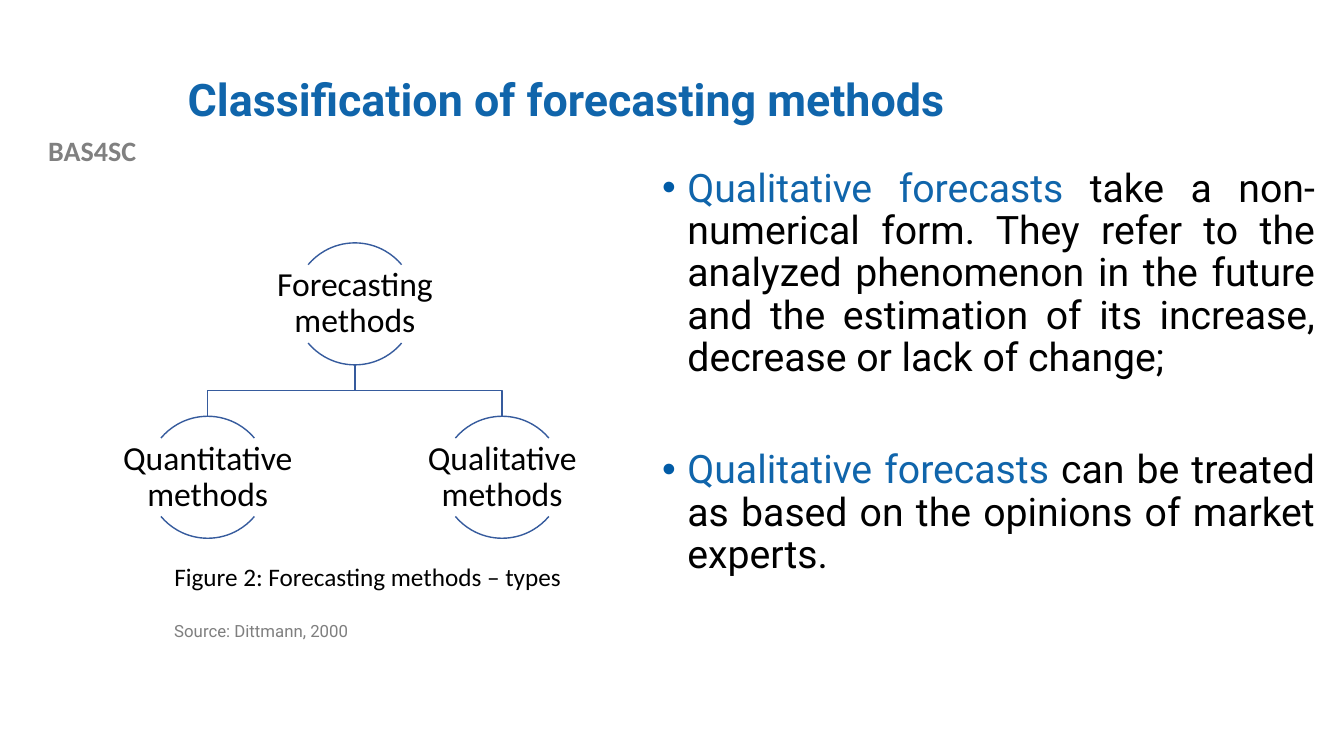
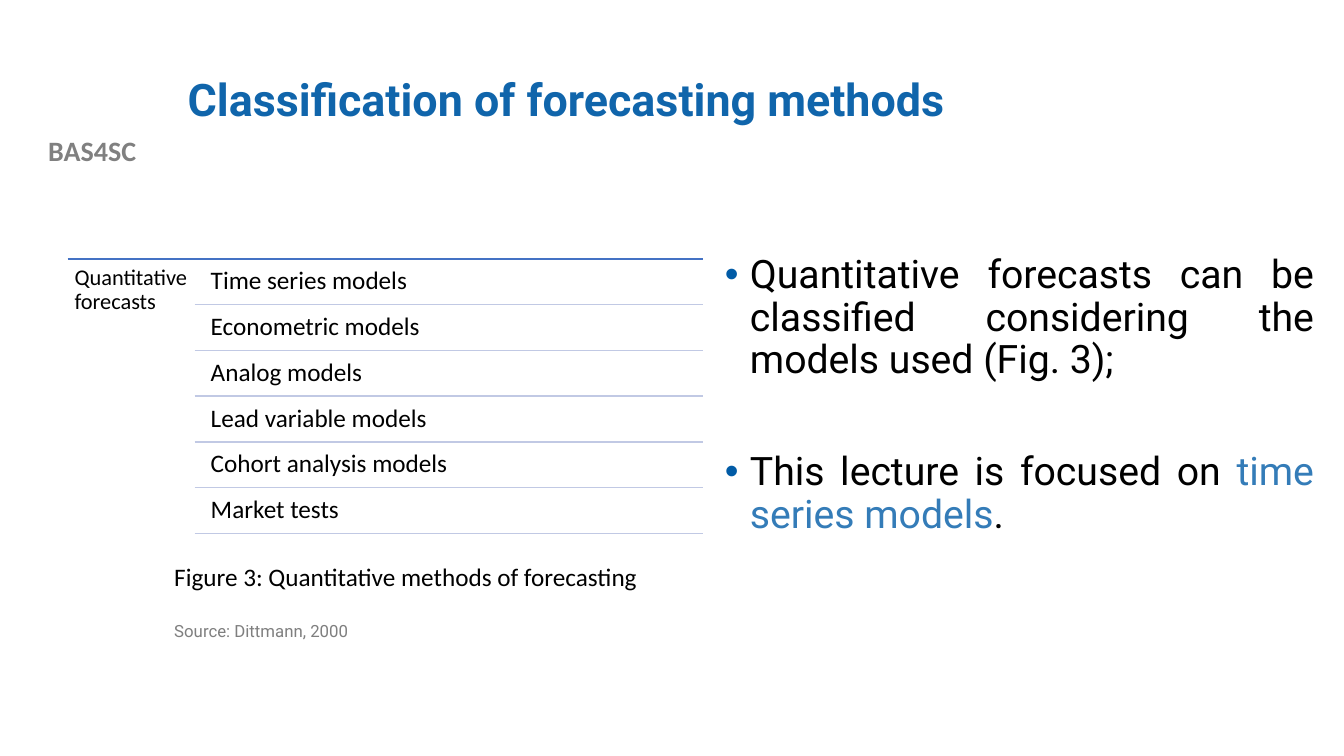
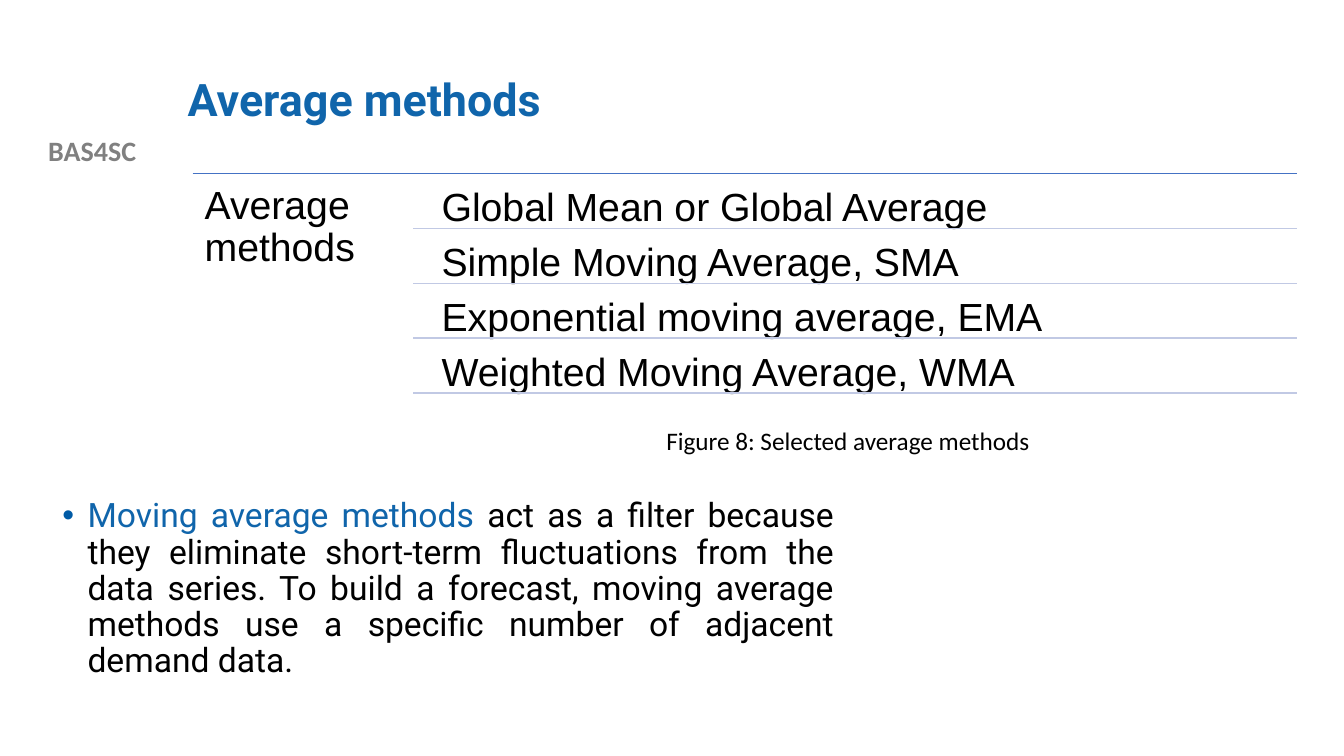
"""Build three slides that classify forecasting and average methods."""
import dataclasses

import lxml.etree
import pptx
import pptx.dml.color
import pptx.enum.shapes
import pptx.enum.text
import pptx.oxml.ns
import pptx.util

Inches = pptx.util.Inches
Pt = pptx.util.Pt
ALIGN = pptx.enum.text.PP_ALIGN
ANCHOR = pptx.enum.text.MSO_ANCHOR
SHAPE = pptx.enum.shapes.MSO_SHAPE
CONNECTOR = pptx.enum.shapes.MSO_CONNECTOR
rgb = pptx.dml.color.RGBColor.from_string
qn = pptx.oxml.ns.qn


@dataclasses.dataclass(frozen=True)
class Theme:
    heading_font: str = "Roboto"
    label_font: str = "Calibri"
    list_font: str = "Arial"
    accent: str = "1065AB"
    bullet: str = "015BA6"
    highlight: str = "347CB8"
    black: str = "000000"
    tag: str = "808080"
    source: str = "7F7F7F"
    tree_line: str = "365B9D"
    top_line: str = "4472C4"
    row_line: str = "C1C9E4"
    title_size: int = 32
    large_size: int = 28
    medium_size: int = 24
    tag_size: int = 20
    caption_size: int = 18
    small_size: int = 16
    source_size: int = 12


theme = Theme()


def write_text(box, paragraphs, font, size, align=ALIGN.LEFT, spacing=0.9,
               bold=False, inset=None, anchor=ANCHOR.TOP, bulleted=False):
    frame = box.text_frame
    frame.word_wrap = True
    frame.auto_size = pptx.enum.text.MSO_AUTO_SIZE.NONE
    frame.vertical_anchor = anchor
    if inset is not None:
        frame.margin_left = frame.margin_right = Inches(inset)
        frame.margin_top = frame.margin_bottom = Inches(inset)
    for index, spans in enumerate(paragraphs):
        para = frame.add_paragraph() if index else frame.paragraphs[0]
        para.alignment = align
        para.line_spacing = spacing
        para.space_before = Pt(50 if index else 0)
        if bulleted:
            props = para._p.get_or_add_pPr()
            props.set("marL", str(Inches(0.25)))
            props.set("indent", str(-Inches(0.25)))
            color = lxml.etree.SubElement(props, qn("a:buClr"))
            lxml.etree.SubElement(color, qn("a:srgbClr"), val=theme.bullet)
            lxml.etree.SubElement(props, qn("a:buFont"), typeface="Arial")
            lxml.etree.SubElement(props, qn("a:buChar"), char="•")
        for text, text_color in spans:
            span = para.add_run()
            span.text = text
            span.font.name = font
            span.font.size = Pt(size)
            span.font.bold = bold
            span.font.color.rgb = rgb(text_color)


def add_text(page, place, paragraphs, font, size, **style):
    box = page.shapes.add_textbox(*map(Inches, place))
    write_text(box, paragraphs, font, size, **style)


deck = pptx.Presentation()
deck.slide_width = Inches(13.33)
deck.slide_height = Inches(7.5)

slides = [
    {
        "title": "Classification of forecasting methods",
        "body_place": (6.47, 1.62, 6.67, 4.76),
        "body_size": theme.large_size,
        "body": [
            [("Qualitative forecasts ", theme.accent),
             ("take a non-numerical form. They refer to the analyzed phenomenon in the "
              "future and the estimation of its increase, decrease or lack of change;",
              theme.black)],
            [("Qualitative forecasts ", theme.accent),
             ("can be treated as based on the opinions of market experts.", theme.black)],
        ],
        "caption": "Figure 2: Forecasting methods – types",
        "caption_place": (1.63, 5.52, 4.48, 0.4),
        "source": "Source: Dittmann, 2000",
    },
    {
        "title": "Classification of forecasting methods",
        "body_place": (7.09, 2.48, 6.04, 3.65),
        "body_size": theme.large_size,
        "body": [
            [("Quantitative forecasts can be classified considering the models used (Fig. 3);",
              theme.black)],
            [("This lecture is focused on ", theme.black),
             ("time series models", theme.highlight),
             (".", theme.black)],
        ],
        "caption": "Figure 3: Quantitative methods of forecasting",
        "caption_place": (1.63, 5.52, 4.96, 0.4),
        "source": "Source: Dittmann, 2000",
    },
    {
        "title": "Average methods",
        "body_place": (0.52, 4.9, 7.85, 2.2),
        "body_size": theme.medium_size,
        "body": [
            [("Moving average methods ", theme.accent),
             ("act as a filter because they eliminate short-term fluctuations from the data "
              "series. To build a forecast, moving average methods use a specific number of "
              "adjacent demand data.", theme.black)],
        ],
        "caption": "Figure 8: Selected average methods",
        "caption_place": (6.51, 4.17, 6.35, 0.4),
        "source": None,
    },
]

pages = []
for content in slides:
    page = deck.slides.add_slide(deck.slide_layouts[5])
    pages.append(page)
    title = page.shapes.title
    title.left, title.top, title.width, title.height = map(Inches, (1.76, 0.4, 10.66, 1.22))
    write_text(title, [[(content["title"], theme.accent)]], theme.heading_font,
               theme.title_size, bold=True, anchor=ANCHOR.MIDDLE)
    add_text(page, (0, 1.28, 1.83, 0.44), [[("BAS4SC", theme.tag)]], theme.label_font,
             theme.tag_size, align=ALIGN.CENTER, spacing=1.0, bold=True)
    add_text(page, content["body_place"], content["body"], theme.heading_font,
             content["body_size"], align=ALIGN.JUSTIFY, bulleted=True)
    add_text(page, content["caption_place"], [[(content["caption"], theme.black)]],
             theme.label_font, theme.caption_size, spacing=1.0)
    if content["source"]:
        add_text(page, (1.63, 6.13, 6.67, 0.28), [[(content["source"], theme.source)]],
                 theme.heading_font, theme.source_size)

tree_page = pages[0]
diameter = 1.21
root_x, root_top, child_top = 3.52, 2.41, 4.13
root_bottom = root_top + diameter
branch_y = (root_bottom + child_top) / 2
nodes = [
    ("Forecasting methods", root_x, root_top),
    ("Quantitative methods", 2.06, child_top),
    ("Qualitative methods", 4.98, child_top),
]
for label, center_x, top in nodes:
    outlines = []
    if top == child_top:
        builder = tree_page.shapes.build_freeform(Inches(root_x), Inches(root_bottom))
        corners = [(root_x, branch_y), (center_x, branch_y), (center_x, child_top)]
        builder.add_line_segments([(Inches(x), Inches(y)) for x, y in corners], close=False)
        outlines.append(builder.convert_to_shape())
    for start, end in ((132, 192), (24, 84)):
        arc = tree_page.shapes.add_shape(
            SHAPE.ARC, Inches(center_x - diameter / 2), Inches(top),
            Inches(diameter), Inches(diameter))
        arc.adjustments[0] = start
        arc.adjustments[1] = end
        outlines.append(arc)
    for outline in outlines:
        outline.shadow.inherit = False
        outline.fill.background()
        outline.line.color.rgb = rgb(theme.tree_line)
        outline.line.width = Pt(1)
    add_text(tree_page, (center_x - 1.21, top + 0.22, 2.42, 0.77), [[(label, theme.black)]],
             theme.label_font, theme.medium_size, align=ALIGN.CENTER, inset=0.02,
             anchor=ANCHOR.MIDDLE)

lists = [
    {
        "page": pages[1], "heading": "Quantitative forecasts", "font": theme.label_font,
        "heading_size": theme.small_size, "row_size": theme.caption_size,
        "left": 0.67, "split": 1.93, "right": 6.97, "top": 2.57, "bottom": 5.29,
        "indent": 0.09, "inset": 0.07,
        "rows": ["Time series models", "Econometric models", "Analog models",
                 "Lead variable models", "Cohort analysis models", "Market tests"],
    },
    {
        "page": pages[2], "heading": "Average methods", "font": theme.list_font,
        "heading_size": theme.large_size, "row_size": theme.large_size,
        "left": 1.91, "split": 4.1, "right": 12.86, "top": 1.72, "bottom": 3.9,
        "indent": 0.16, "inset": 0.12,
        "rows": ["Global Mean or Global Average", "Simple Moving Average, SMA",
                 "Exponential moving average, EMA", "Weighted Moving Average, WMA"],
    },
]
for group in lists:
    page, top, right = group["page"], group["top"], group["right"]
    pitch = (group["bottom"] - top) / len(group["rows"])
    add_text(page, (group["left"], top, group["split"] - group["left"], group["bottom"] - top),
             [[(group["heading"], theme.black)]], group["font"], group["heading_size"],
             inset=group["inset"])
    rules = [(group["left"], top, theme.top_line)]
    row_left = group["split"] + group["indent"]
    for index, row in enumerate(group["rows"]):
        row_top = top + index * pitch
        add_text(page, (row_left, row_top + 0.02, right - row_left, pitch - 0.02),
                 [[(row, theme.black)]], group["font"], group["row_size"],
                 inset=group["inset"])
        rules.append((group["split"], row_top + pitch, theme.row_line))
    for left, y, color in rules:
        rule = page.shapes.add_connector(
            CONNECTOR.STRAIGHT, Inches(left), Inches(y), Inches(right), Inches(y))
        rule.line.color.rgb = rgb(color)
        rule.line.width = Pt(1)
        lxml.etree.SubElement(rule.element.spPr, qn("a:effectLst"))

deck.save("out.pptx")
